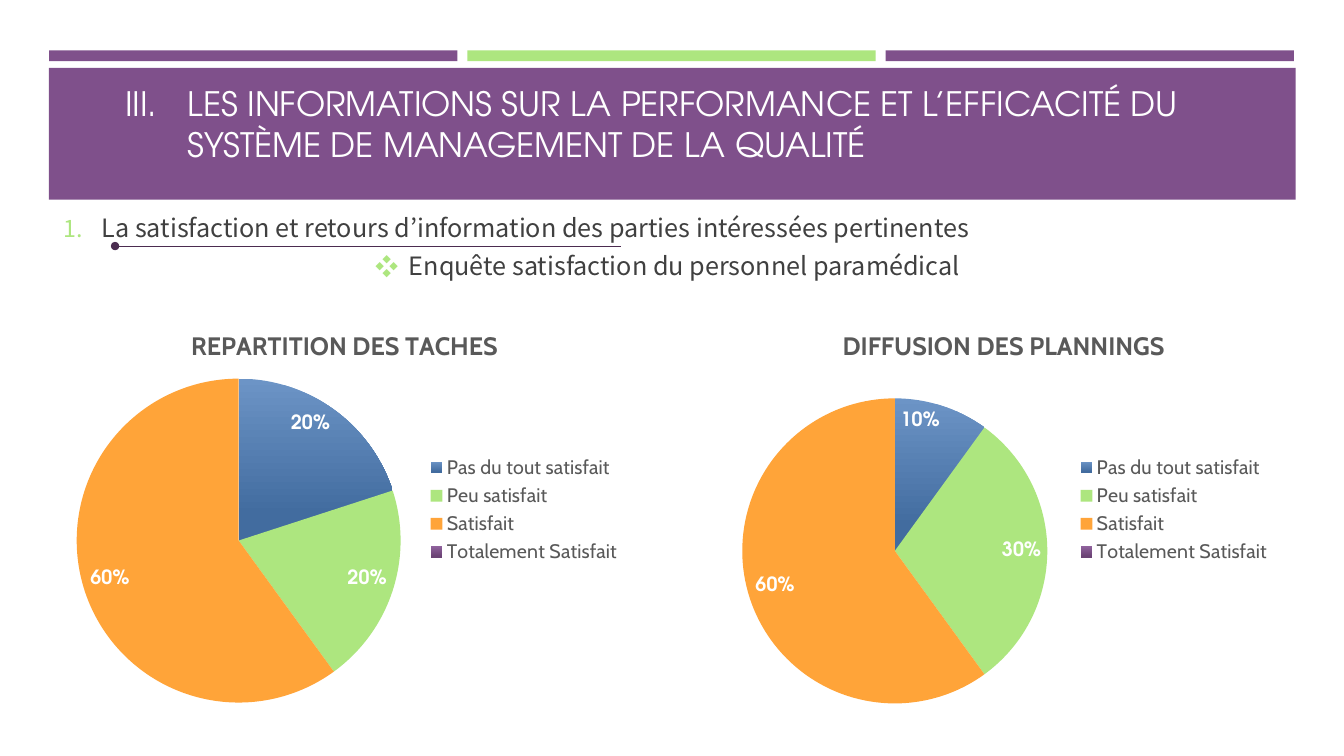
from lxml.etree import SubElement
from pptx import Presentation
from pptx.chart.data import CategoryChartData as ChartData
from pptx.dml.color import RGBColor
from pptx.enum.chart import XL_CHART_TYPE as Kind, XL_LABEL_POSITION as Spot
from pptx.enum.chart import XL_LEGEND_POSITION as Side
from pptx.enum.shapes import MSO_CONNECTOR as Link, MSO_SHAPE as Shape
from pptx.enum.text import MSO_ANCHOR as Anchor, MSO_AUTO_SIZE as Fit, PP_ALIGN as Align
from pptx.oxml.ns import qn
from pptx.util import Cm, Pt

# Content
TITLE = ("LES INFORMATIONS SUR LA PERFORMANCE ET L’EFFICACITÉ DU "
         "SYSTÈME DE MANAGEMENT DE LA QUALITÉ")
# text, alignment, indent (cm), bullet tag, bullet attributes
LINES = [
    ("La satisfaction et retours d’information des parties intéressées pertinentes",
     Align.LEFT, 0.96, "a:buAutoNum", {"type": "arabicPeriod"}),
    ("Enquête satisfaction du personnel paramédical",
     Align.CENTER, 0.84, "a:buChar", {"char": "❖"}),
]
CATS = ["Pas du tout satisfait", "Peu satisfait", "Satisfait", "Totalement Satisfait"]
# title, values, left and width (cm), title corner, plot frame (shares of the chart)
PIES = [
    ("REPARTITION DES TACHES", (0.2, 0.2, 0.6, 0), 1.35, 14.58,
     (0.23, 0.05), (0.04, 0.18, 0.56, 0.79)),
    ("DIFFUSION DES PLANNINGS", (0.1, 0.3, 0.6, 0), 17.96, 14.35,
     (0.22, 0.05), (0.05, 0.23, 0.54, 0.74)),
]
PURPLE, GREEN, GREY = "7F508B", "ADE67F", "595959"
FILLS = [("6C94C6", "426C9F"), GREEN, "FFA439", ("90629D", "6B4375")]
HEAD, BODY, NOTE = "TeX Gyre Adventor", "Noto Sans CJK KR", "Cabin"


def rgb(code):
    return RGBColor.from_string(code)


def style(font, name, size, color, bold=False):
    font.name, font.size, font.bold = name, Pt(size), bold
    font.color.rgb = rgb(color)


def paint(fill, color):
    if isinstance(color, str):
        fill.solid()
        fill.fore_color.rgb = rgb(color)
        return
    fill.gradient()
    fill.gradient_angle = 270
    for stop, code, pos in zip(fill.gradient_stops, color, (0, 0.84)):
        stop.color.rgb, stop.position = rgb(code), pos


def bar(left, top, width, height, color):
    box = slide.shapes.add_shape(Shape.RECTANGLE, Cm(left), Cm(top), Cm(width), Cm(height))
    box.shadow.inherit = False
    paint(box.fill, color)
    box.line.fill.background()


def bullet(para, indent, tag, attrs, color=None):
    props = para._p.get_or_add_pPr()
    props.set("marL", str(Cm(indent)))
    props.set("indent", str(-Cm(indent)))
    if color:
        SubElement(SubElement(props, qn("a:buClr")), qn("a:srgbClr"), val=color)
        SubElement(props, qn("a:buSzPct"), val="92000")
    SubElement(props, qn("a:buFont"), typeface=BODY if color else HEAD)
    SubElement(props, qn(tag), attrs)


def place(node, index, shares):
    """Give a chart part a fixed spot, in shares of the chart."""
    for old in node.findall(qn("c:layout")):
        node.remove(old)
    frame = SubElement(node, qn("c:layout"))
    node.insert(index, frame)
    spot = SubElement(frame, qn("c:manualLayout"))
    if len(shares) == 4:
        SubElement(spot, qn("c:layoutTarget"), val="inner")
    for axis in "xy":
        SubElement(spot, qn(f"c:{axis}Mode"), val="edge")
    for key, share in zip("xywh", shares):
        SubElement(spot, qn(f"c:{key}"), val=str(share))


def pie(title, vals, left, width, corner, frame):
    data = ChartData(number_format="0%")
    data.categories = CATS
    data.add_series("Series 1", vals)
    chart = slide.shapes.add_chart(
        Kind.PIE, Cm(left), Cm(7.65), Cm(width), Cm(10.39), data).chart
    style(chart.font, NOTE, 10, "000000")

    chart.has_title = True
    text = chart.chart_title.text_frame
    text.text = title
    style(text.paragraphs[0].font, NOTE, 18, GREY, True)
    place(chart.chart_title._element, 1, corner)

    chart.has_legend = True
    chart.legend.position = Side.RIGHT
    chart.legend.include_in_layout = False
    style(chart.legend.font, NOTE, 14, GREY)

    plot = chart.plots[0]
    plot.vary_by_categories = True
    place(plot._element.getparent(), 0, frame)
    for index, color in enumerate(FILLS):
        paint(plot.series[0].points[index].format.fill, color)
    plot.has_data_labels = True
    labels = plot.data_labels
    labels.show_value, labels.show_percentage = True, False
    labels.number_format, labels.number_format_is_linked = "0%;;", False
    labels.position = Spot.INSIDE_END
    style(labels.font, HEAD, 14, "FFFFFF", True)


deck = Presentation()
deck.slide_width, deck.slide_height = Cm(33.87), Cm(19.05)
slide = deck.slides.add_slide(deck.slide_layouts[5])

# Top bars and title band
for step, color in enumerate((PURPLE, GREEN, PURPLE)):
    bar(1.24 + step * 10.54, 1.27, 10.29, 0.27, color)
bar(1.23, 1.71, 31.42, 3.32, PURPLE)

# Title, brought in front of the band
title = slide.shapes.title
slide.shapes._spTree.append(title._element)
title.left, title.top, title.width, title.height = Cm(2.9), Cm(0.53), Cm(29.41), Cm(3.73)
text = title.text_frame
text.text = TITLE
text.auto_size, text.vertical_anchor = Fit.NONE, Anchor.BOTTOM
para = text.paragraphs[0]
para.alignment = Align.LEFT
bullet(para, 1.58, "a:buAutoNum", {"type": "romanUcPeriod", "startAt": "3"})
style(para.font, HEAD, 24, "FFFFFF")

# Numbered line and sub-point
text = slide.shapes.add_textbox(Cm(1.35), Cm(4.55), Cm(30.96), Cm(3.33)).text_frame
text.word_wrap, text.vertical_anchor = True, Anchor.MIDDLE
for index, (words, align, indent, tag, attrs) in enumerate(LINES):
    para = text.add_paragraph() if index else text.paragraphs[0]
    para.text, para.alignment = words, align
    if index:
        para.space_before = Pt(5.4)
    bullet(para, indent, tag, attrs, GREEN)
    style(para.font, BODY, 18, "404040")

# Rule with a round head
rule = slide.shapes.add_connector(Link.STRAIGHT, Cm(2.9), Cm(6.2), Cm(15.65), Cm(6.2))
rule.line.color.rgb, rule.line.width = rgb("4B2C50"), Pt(0.25)
SubElement(rule.line._get_or_add_ln(), qn("a:headEnd"), type="oval")
SubElement(rule._element.spPr, qn("a:effectLst"))

# Charts
for entry in PIES:
    pie(*entry)

deck.save("out.pptx")
